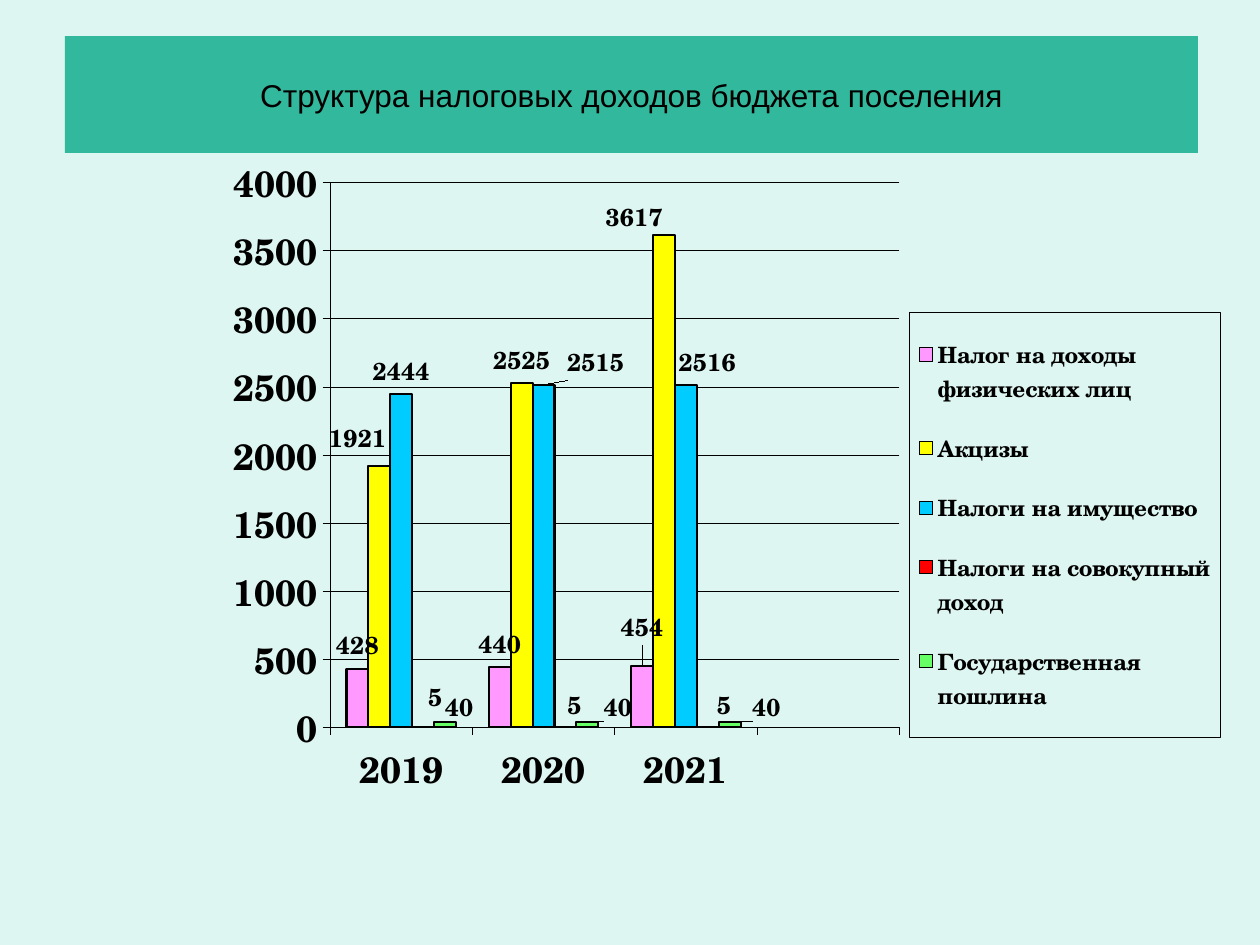
from lxml import etree
from pptx import Presentation
from pptx.chart.data import CategoryChartData
from pptx.dml.color import RGBColor
from pptx.enum.chart import XL_CHART_TYPE as ChartType
from pptx.enum.chart import XL_LABEL_POSITION as LabelPosition
from pptx.enum.chart import XL_LEGEND_POSITION as LegendPosition
from pptx.enum.chart import XL_TICK_LABEL_POSITION as TickLabels
from pptx.enum.chart import XL_TICK_MARK as TickMark
from pptx.enum.shapes import MSO_SHAPE as Preset
from pptx.enum.text import MSO_ANCHOR as Anchor
from pptx.enum.text import PP_ALIGN as Align
from pptx.oxml import parse_xml
from pptx.oxml.ns import nsdecls, qn
from pptx.util import Emu, Pt

PX = 914400 // 126
CHART_BOX = (197, 147, 1024, 683)
SERIF = "TeX Gyre Schola"
BLACK = "000000"
THIN, OUTLINE = 0.29, 1.16

YEARS = ["2019", "2020", "2021", ""]
# Name, colour, values, label shifts in px by year index
TAXES = [
    ("Налог на доходы физических лиц", "FF99FF", (428, 440, 454),
     {2: (0, -15)}),
    ("Акцизы", "FFFF00", (1921, 2525, 3617),
     {0: (-21, -4), 2: (-30, 6)}),
    ("Налоги на имущество", "00CCFF", (2444, 2515, 2516),
     {1: (52, 1), 2: (22, 1)}),
    ("Налоги на совокупный доход", "FF0000", (5, 5, 5),
     {0: (12, -6), 1: (9, 2), 2: (16, 2)}),
    ("Государственная пошлина", "66FF66", (40, 40, 40),
     {0: (14, 9), 1: (31, 9), 2: (37, 9)}),
]


def px(*lengths):
    return [Emu(length * PX) for length in lengths]


def rgb(value):
    return RGBColor.from_string(value)


def set_font(font, size, name=SERIF, color=BLACK, bold=True):
    font.size, font.name, font.bold = Pt(size), name, bold
    font.color.rgb = rgb(color)


def set_line(line, width):
    line.color.rgb = rgb(BLACK)
    line.width = Pt(width)


def add_text(shape, text, align=Align.CENTER, **font_format):
    frame = shape.text_frame
    frame.word_wrap = True
    frame.vertical_anchor = Anchor.MIDDLE
    paragraph = frame.paragraphs[0]
    paragraph.alignment = align
    run = paragraph.add_run()
    run.text = text
    set_font(run.font, **font_format)


def add_banner(slide, box, fill, text):
    shape = slide.shapes.add_shape(Preset.RECTANGLE, *px(*box))
    shape.shadow.inherit = False
    shape.fill.solid()
    shape.fill.fore_color.rgb = rgb(fill)
    shape.line.fill.background()
    add_text(shape, text, size=18, name="Arial", bold=False)


def make_layout(x, y, width=None, height=None, inner=False):
    """Manual chart layout, in fractions of the chart's size."""
    layout = etree.Element(qn("c:layout"))
    manual = etree.SubElement(layout, qn("c:manualLayout"))
    parts = [("x", x), ("y", y)]
    if width is not None:
        parts = [("xMode", "edge"), ("yMode", "edge"), *parts,
                 ("w", width), ("h", height)]
    if inner:
        parts.insert(0, ("layoutTarget", "inner"))
    for tag, value in parts:
        etree.SubElement(manual, qn("c:" + tag)).set("val", str(value))
    return layout


def style_axis(axis):
    axis.major_tick_mark = TickMark.OUTSIDE
    axis.minor_tick_mark = TickMark.NONE
    set_font(axis.tick_labels.font, 20.9)
    set_line(axis.format.line, THIN)


def style_label(label):
    set_font(label.font, 14)
    label.position = LabelPosition.OUTSIDE_END


def style_series(series, color, shifts):
    series.format.fill.solid()
    series.format.fill.fore_color.rgb = rgb(color)
    series.invert_if_negative = False
    set_line(series.format.line, OUTLINE)
    labels = series.data_labels
    labels.show_value = True
    style_label(labels)
    for index in shifts:
        style_label(series.points[index].data_label)
    # Move single labels away from their default place
    for element in series._element.iter(qn("c:dLbl")):
        position = element.find(qn("c:idx"))
        dx, dy = shifts[int(position.get("val"))]
        position.addnext(make_layout(round(dx / CHART_BOX[2], 3),
                                     round(dy / CHART_BOX[3], 3)))


def style_legend(chart):
    chart.has_legend = True
    legend = chart.legend
    legend.position = LegendPosition.RIGHT
    legend.include_in_layout = False
    set_font(legend.font, 12.8)
    element = legend._element
    for old in element.findall(qn("c:layout")):
        element.remove(old)
    element.find(qn("c:legendPos")).addnext(
        make_layout(0.696, 0.242, 0.303, 0.623))
    element.find(qn("c:txPr")).addprevious(parse_xml(
        f'<c:spPr {nsdecls("c", "a")}><a:noFill/><a:ln w="{Pt(THIN)}">'
        f'<a:solidFill><a:srgbClr val="{BLACK}"/></a:solidFill></a:ln></c:spPr>'))


def add_tax_chart(slide):
    data = CategoryChartData()
    data.categories = YEARS
    for name, _, values, _ in TAXES:
        data.add_series(name, (*values, None))
    chart = slide.shapes.add_chart(
        ChartType.COLUMN_CLUSTERED, *px(*CHART_BOX), data).chart
    chart.has_title = False
    set_font(chart.font, 20.9)

    # Plot
    plot = chart.plots[0]
    plot.gap_width, plot.overlap = 150, 0
    plot.vary_by_categories = False
    for series, (_, color, _, shifts) in zip(plot.series, TAXES):
        style_series(series, color, shifts)
    area = chart._chartSpace.chart.plotArea
    for old in area.findall(qn("c:layout")):
        area.remove(old)
    area.insert(0, make_layout(0.13, 0.052, 0.556, 0.798, inner=True))

    # Axes
    style_axis(chart.category_axis)
    chart.category_axis.tick_label_position = TickLabels.LOW
    value_axis = chart.value_axis
    style_axis(value_axis)
    value_axis.minimum_scale, value_axis.maximum_scale = 0, 4000
    value_axis.major_unit = 500
    value_axis.has_major_gridlines = True
    set_line(value_axis.major_gridlines.format.line, THIN)

    style_legend(chart)


def main():
    presentation = Presentation()
    presentation.slide_width, presentation.slide_height = px(1260, 945)
    slide = presentation.slides.add_slide(presentation.slide_layouts[6])
    slide.background.fill.solid()
    slide.background.fill.fore_color.rgb = rgb("DEF6F1")
    add_banner(slide, (65, 36, 1133, 117), "32B89C",
               "Структура налоговых доходов бюджета поселения")
    add_tax_chart(slide)
    presentation.save("out.pptx")


if __name__ == "__main__":
    main()
